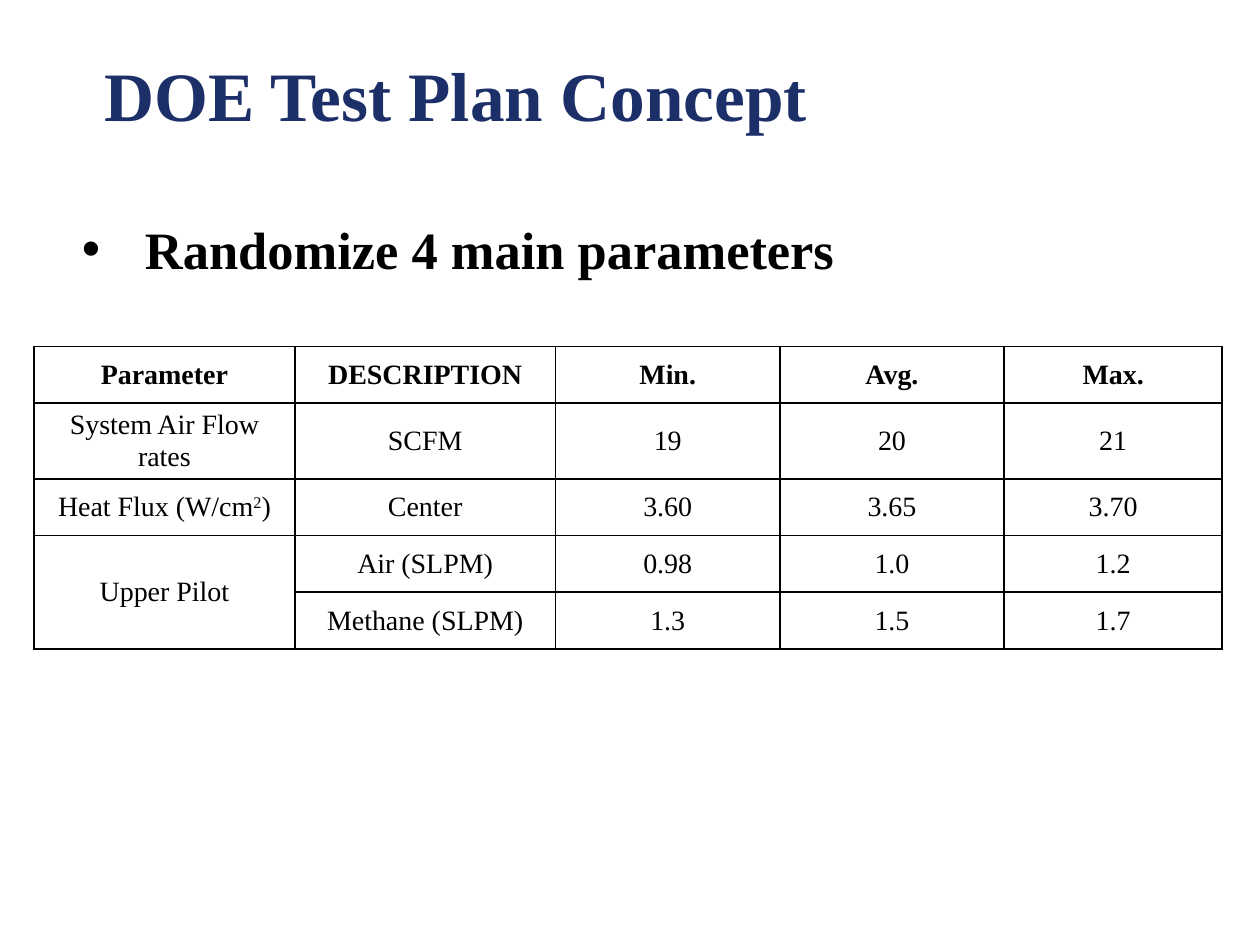
from lxml import etree
from pptx import Presentation
from pptx.dml.color import RGBColor
from pptx.enum.text import MSO_ANCHOR, MSO_AUTO_SIZE, PP_ALIGN
from pptx.oxml.ns import qn
from pptx.util import Inches, Pt

LEFT, CENTER = PP_ALIGN.LEFT, PP_ALIGN.CENTER
TOP, MIDDLE = MSO_ANCHOR.TOP, MSO_ANCHOR.MIDDLE
NO_AUTOFIT = MSO_AUTO_SIZE.NONE
FONT, NAVY, BLACK = "Times New Roman", "1D2F68", "000000"

COLUMN_WIDTHS = [2.07, 2.07, 1.78, 1.78, 1.73]
ROW_HEIGHTS = [0.45, 0.6, 0.45, 0.45, 0.45]
PARAMETERS = [
    ["Parameter", "DESCRIPTION", "Min.", "Avg.", "Max."],
    ["System Air Flow rates", "SCFM", "19", "20", "21"],
    ["Heat Flux (W/cm^2^)", "Center", "3.60", "3.65", "3.70"],
    ["Upper Pilot", "Air (SLPM)", "0.98", "1.0", "1.2"],
    ["", "Methane (SLPM)", "1.3", "1.5", "1.7"],
]
CELL_FORMAT = {
    "vertical_anchor": MIDDLE,
    "margin_left": Inches(0.07),
    "margin_right": Inches(0.07),
    "margin_top": 0,
    "margin_bottom": 0,
}


def rgb(color):
    """Turn a hex string into a colour."""
    return RGBColor.from_string(color)


def apply(target, values):
    """Set each attribute named in a dict of format values."""
    for name, value in values.items():
        setattr(target, name, value)


def add_text(paragraph, text, size, color, bold, align):
    """Write text into a paragraph, raising the parts between carets."""
    apply(paragraph, {"alignment": align, "space_before": Pt(0)})
    for index, part in enumerate(text.split("^")):
        run = paragraph.add_run()
        run.text = part
        apply(run.font, {"name": FONT, "size": Pt(size), "bold": bold})
        run.font.color.rgb = rgb(color)
        if index % 2:
            run._r.get_or_add_rPr().set("baseline", "30000")


def place(placeholder, box, anchor):
    """Move a placeholder to a box and return its first paragraph."""
    apply(placeholder, dict(zip(("left", "top", "width", "height"), map(Inches, box))))
    frame = placeholder.text_frame
    apply(frame, {"vertical_anchor": anchor, "word_wrap": True, "auto_size": NO_AUTOFIT})
    return frame.paragraphs[0]


def add_title(slide, box):
    """Fill the title placeholder."""
    add_text(place(slide.shapes.title, box, MIDDLE), "DOE Test Plan Concept", 39.6, NAVY, True, LEFT)


def add_bullet(slide, box):
    """Fill the body placeholder with one bulleted statement."""
    statement = place(slide.placeholders[1], box, TOP)
    add_text(statement, "Randomize 4 main parameters", 30, BLACK, True, LEFT)
    properties = statement._p.get_or_add_pPr()
    properties.set("marL", str(Inches(0.5)))
    properties.set("indent", str(Inches(-0.5)))
    etree.SubElement(properties, qn("a:buChar")).set("char", "•")


def add_borders(cell, color, width):
    """Draw a solid line on all four sides of a cell."""
    properties = cell._tc.get_or_add_tcPr()
    for side in ("lnL", "lnR", "lnT", "lnB"):
        line = etree.SubElement(properties, qn(f"a:{side}"), w=str(Pt(width)))
        fill = etree.SubElement(line, qn("a:solidFill"))
        etree.SubElement(fill, qn("a:srgbClr"), val=color)


def add_parameter_table(slide, left, top):
    """Build the table of parameters and their ranges."""
    size = map(Inches, (left, top, sum(COLUMN_WIDTHS), sum(ROW_HEIGHTS)))
    table = slide.shapes.add_table(len(ROW_HEIGHTS), len(COLUMN_WIDTHS), *size).table
    apply(table, {"first_row": False, "horz_banding": False})
    for column, width in zip(table.columns, COLUMN_WIDTHS):
        column.width = Inches(width)
    for row_index, (row, height, texts) in enumerate(zip(table.rows, ROW_HEIGHTS, PARAMETERS)):
        row.height = Inches(height)
        for cell, text in zip(row.cells, texts):
            apply(cell, CELL_FORMAT)
            add_borders(cell, BLACK, 1)
            cell.fill.background()
            if text:
                add_text(cell.text_frame.paragraphs[0], text, 16, BLACK, row_index == 0, CENTER)
    table.cell(3, 0).merge(table.cell(4, 0))


def main():
    """Build the slide and save it."""
    deck = Presentation()
    apply(deck, {"slide_width": Inches(10), "slide_height": Inches(7.5)})
    slide = deck.slides.add_slide(deck.slide_layouts[1])
    add_bullet(slide, (0.55, 1.67, 8.92, 0.61))
    add_title(slide, (0.73, 0.41, 9.27, 0.67))
    add_parameter_table(slide, 0.27, 2.75)
    deck.save("out.pptx")


if __name__ == "__main__":
    main()
